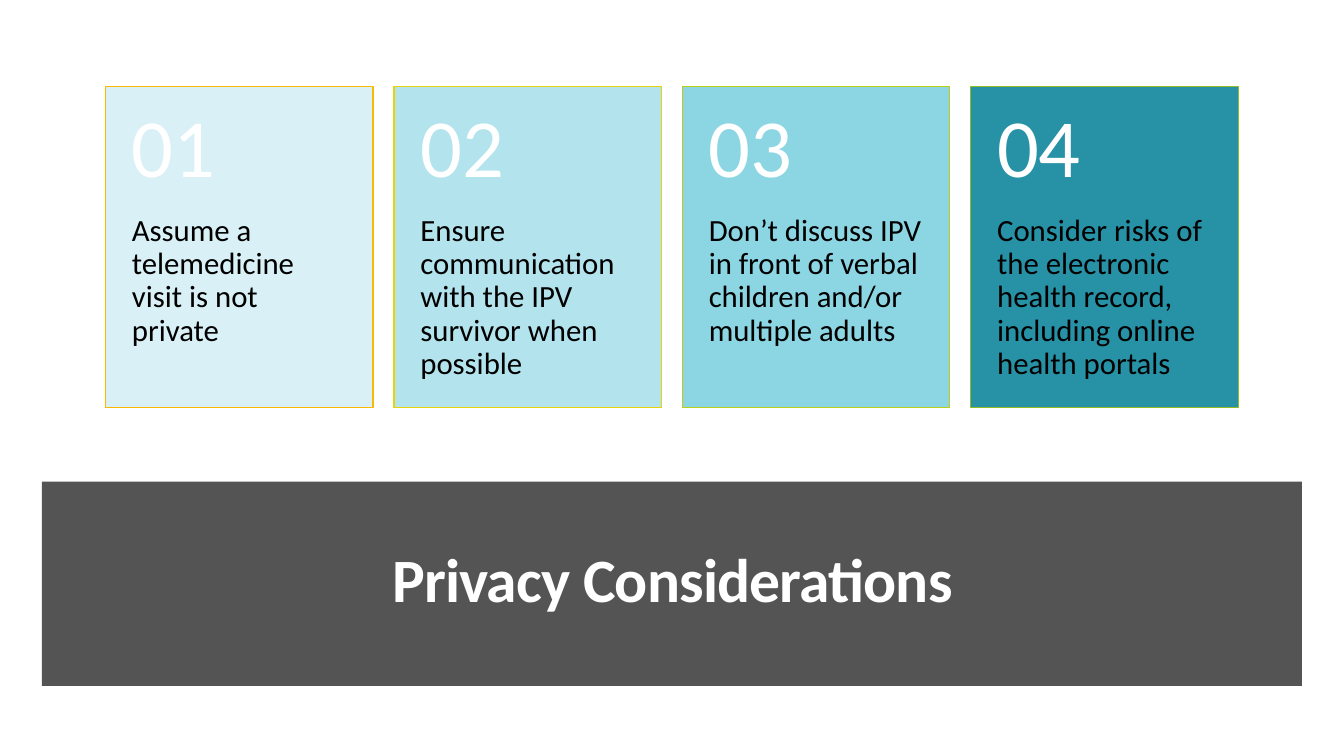
"""Build the slide on privacy considerations."""
from pptx import Presentation
from pptx.dml.color import RGBColor
from pptx.enum.shapes import MSO_SHAPE
from pptx.enum.text import MSO_ANCHOR, MSO_AUTO_SIZE, PP_ALIGN
from pptx.util import Pt

COLORS = {"white": "FFFFFF", "black": "000000", "band": "545454"}
CARDS = [
    ("Assume a telemedicine visit is not private", "D9F1F6", "FAB900"),
    ("Ensure communication with the IPV survivor when possible", "B3E3ED", "E4D30D"),
    ("Don’t discuss IPV in front of verbal children and/or multiple adults",
     "8CD6E4", "BCCF18"),
    ("Consider risks of the electronic health record, including online health portals",
     "2791A6", "90BB23"),
]
LEFT, TOP, STEP = 75.5, 62, 206
WIDTH, HEIGHT, HEAD = 191, 229, 91.5


def add_box(slide, area, fill, line=None):
    shape = slide.shapes.add_shape(MSO_SHAPE.RECTANGLE, *map(Pt, area))
    shape.shadow.inherit = False
    shape.fill.solid()
    shape.fill.fore_color.rgb = RGBColor.from_string(fill)
    if line:
        shape.line.color.rgb = RGBColor.from_string(line)
        shape.line.width = Pt(0.85)
    else:
        shape.line.fill.background()
    return shape


def set_text(frame, text, size, color, anchor, align=PP_ALIGN.LEFT):
    frame.text = text
    frame.word_wrap = True
    frame.auto_size = MSO_AUTO_SIZE.NONE
    frame.vertical_anchor = anchor
    para = frame.paragraphs[0]
    para.alignment = align
    para.line_spacing = 0.9
    para.font.name = "Calibri"
    para.font.size = Pt(size)
    para.font.color.rgb = RGBColor.from_string(COLORS[color])
    return para


def add_label(slide, area, text, size, color, anchor, above, below):
    frame = slide.shapes.add_textbox(*map(Pt, area)).text_frame
    frame.margin_left = frame.margin_right = Pt(18.8)
    frame.margin_top, frame.margin_bottom = Pt(above), Pt(below)
    set_text(frame, text, size, color, anchor)


def add_card(slide, index, text, fill, line):
    left = LEFT + index * STEP
    add_box(slide, (left, TOP, WIDTH, HEIGHT), fill, line)
    add_label(slide, (left, TOP + HEAD, WIDTH, HEIGHT - HEAD), text,
              22, "black", MSO_ANCHOR.TOP, 0, 26)
    add_label(slide, (left, TOP, WIDTH, HEAD), f"{index + 1:02}",
              59, "white", MSO_ANCHOR.MIDDLE, 13, 13)


def add_title(slide, text):
    band = add_box(slide, (30, 344, 900, 146), COLORS["band"])
    title = slide.shapes.title
    title.element.addprevious(band.element)
    title.left, title.top = Pt(44), Pt(362)
    title.width, title.height = Pt(872.5), Pt(107.5)
    para = set_text(title.text_frame, text, 44, "white",
                    MSO_ANCHOR.MIDDLE, PP_ALIGN.CENTER)
    para.font.bold = True
    para.runs[0].font._element.set("spc", "-60")


def main():
    deck = Presentation()
    deck.slide_width, deck.slide_height = Pt(960), Pt(540)
    slide = deck.slides.add_slide(deck.slide_layouts[5])
    add_title(slide, "Privacy Considerations")
    for index, card in enumerate(CARDS):
        add_card(slide, index, *card)
    deck.save("out.pptx")


if __name__ == "__main__":
    main()
